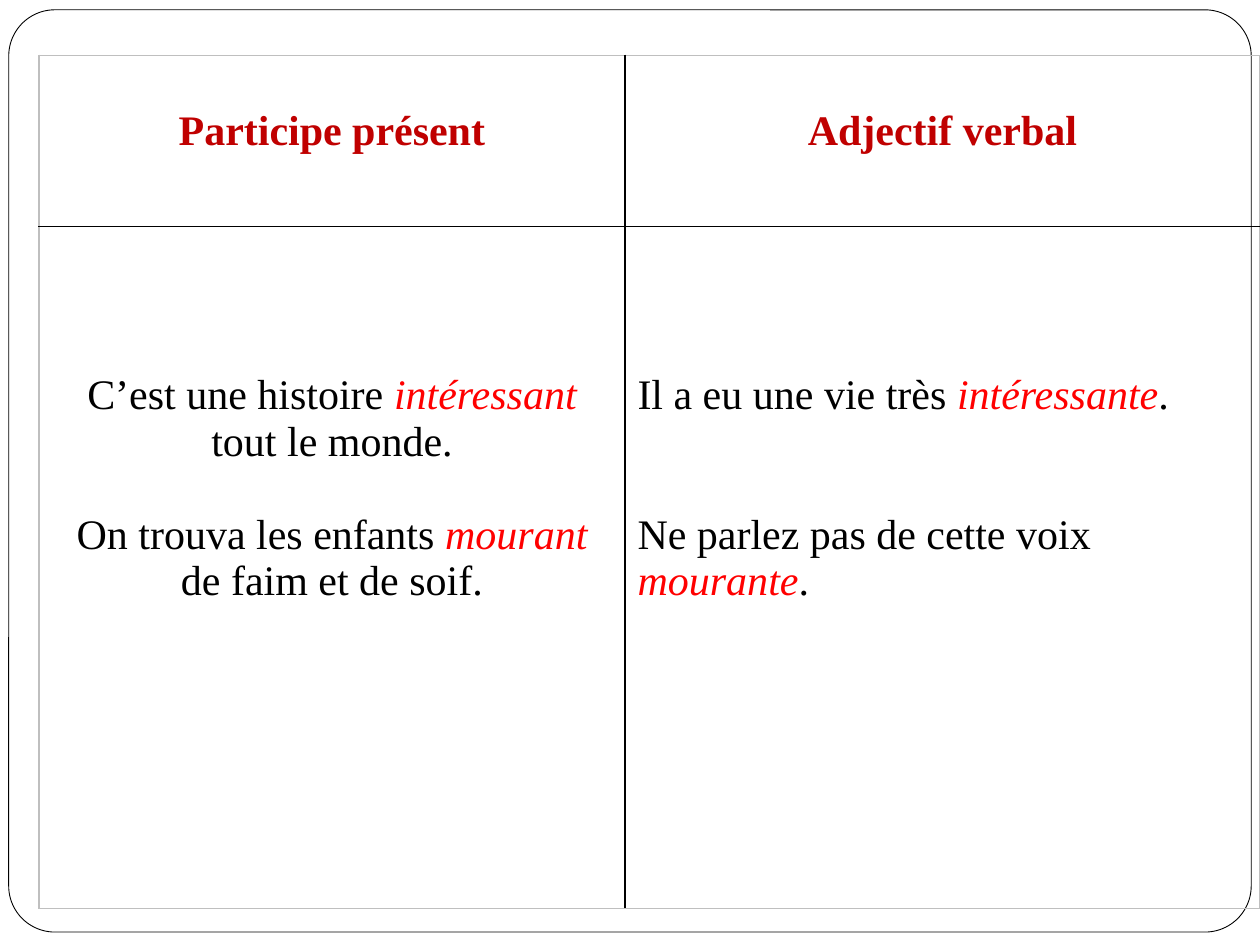
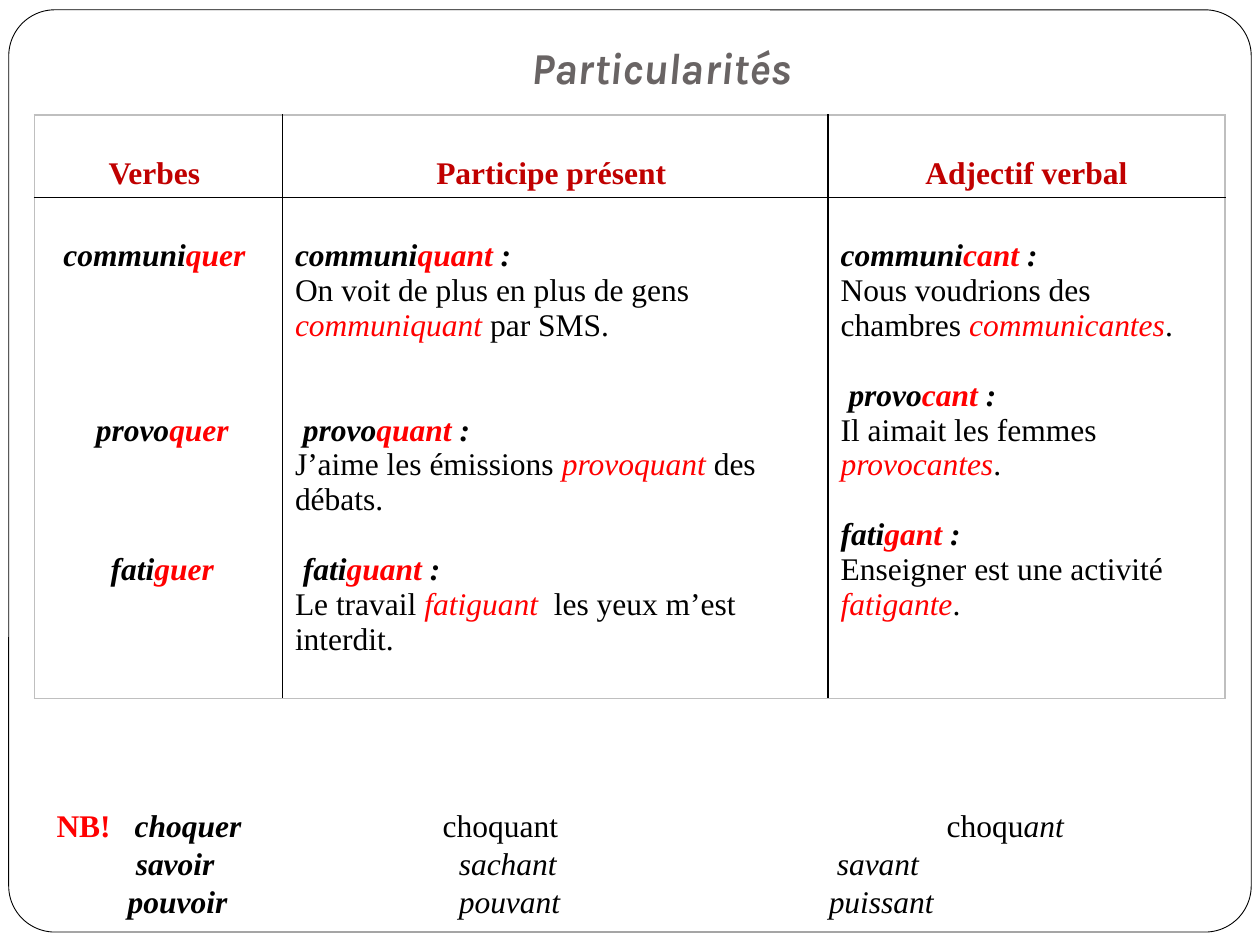
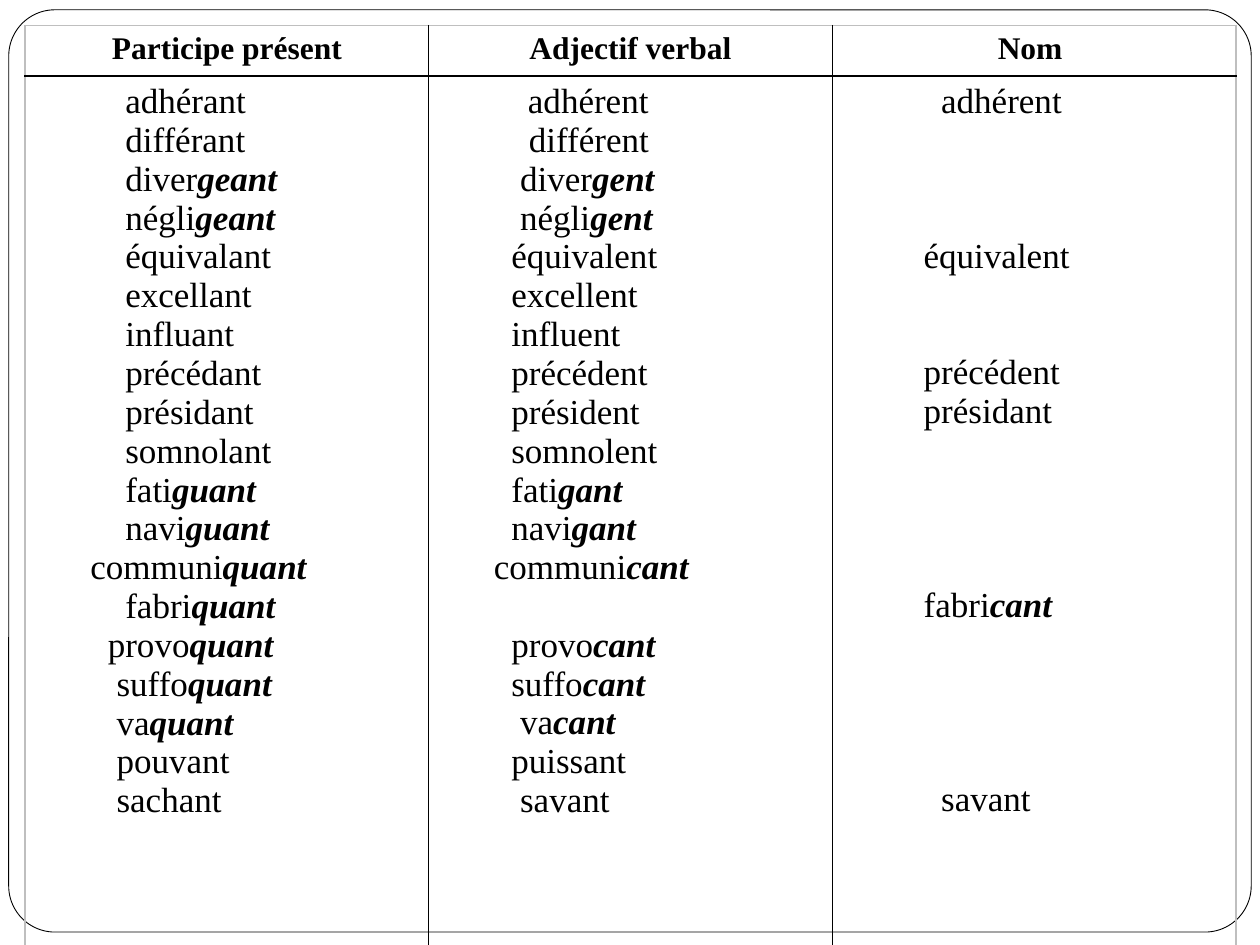
from pptx import Presentation
from pptx.dml.color import RGBColor
from pptx.enum.shapes import MSO_SHAPE
from pptx.enum.text import MSO_ANCHOR, PP_ALIGN
from pptx.oxml.ns import qn
from pptx.util import Pt
from lxml.etree import SubElement

# Shared look
BLACK, RED, DARK_RED, GREY, TITLE_GREY, WHITE = (
    "000000", "FF0000", "C00000", "BFBFBF", "696464", "FFFFFF")
SERIF, TITLE_FONT = "Times New Roman", "Karla"
LINE = 1.107            # line height of the serif font, in ems
CELL_TOP = 3.6
TITLE_ONLY, BLANK = 5, 6
# Text in [brackets] starts with one of these marks: bold, italic, colour
STYLES = {
    "*": (False, True, RED),
    "_": (True, True, BLACK),
    "^": (True, True, RED),
    "~": (False, True, BLACK),
    "#": (True, False, RED),
}

# Content: a paragraph is (text, empty lines before, indent)
COMPARISON = {
    "at": (22.3, 31.7), "columns": (334.8, 362.9), "rows": (97.9, 389.5),
    "header_size": 24, "header_color": DARK_RED, "header_gap": 1,
    "size": 24, "centred": (0,),
    "header": ("Participe présent", "Adjectif verbal"),
    "body": (
        [("C’est une histoire [*intéressant ]tout le monde.", 3, 0),
         ("On trouva les enfants [*mourant ]de faim et de soif.", 1, 0)],
        [("Il a eu une vie très [*intéressante].", 3, 0),
         ("Ne parlez pas de cette voix [*mourante].", 2, 0)],
    ),
}

PARTICULARITIES = {
    "at": (19.6, 65.7), "columns": (141.8, 311.8, 226.8), "rows": (46.9, 286.3),
    "header_size": 18, "header_color": DARK_RED, "header_gap": 1,
    "size": 18, "centred": (0,),
    "header": ("Verbes ", "Participe présent ", "Adjectif verbal"),
    "body": (
        [("[_communi][^quer ]", 1, 0),
         ("[_provo][^quer]", 4, 4.5),
         ("[_fati][^guer]", 3, 4.5)],
        [("[_communi][^quant ][_:]", 1, 0),
         ("On voit de plus en plus de gens [*communiquant] par SMS.", 0, 0),
         ("[_provo][^quant ][_:]", 2, 4.5),
         ("J’aime les émissions [*provoquant ]des débats.", 0, 0),
         ("[_fati][^guant ][_:]", 1, 4.5),
         ("Le travail [*fatiguant ] les yeux m’est interdit.", 0, 0)],
        [("[_communi][^cant ][_:]", 1, 0),
         ("Nous voudrions des chambres [*communicantes].", 0, 0),
         ("[_provo][^cant ][_:]", 1, 4.5),
         ("Il aimait les femmes [*provocantes].", 0, 0),
         ("[_fati][^gant ][_:]", 1, 0),
         ("Enseigner est une activité [*fatigante].", 0, 0)],
    ),
}

# Lines under the second table, each with its tab stops
EXCEPTIONS = [
    ("[#NB!]\t[_choquer]\tchoquant\tchoqu[~ant]", (44.7, 220.7, 508.7)),
    ("\t[_savoir]\t[~sachant]\t[~savant]", (45.3, 229.9, 445.9)),
    ("\t[_pouvoir]\t[~pouvant]\t[~puissant]", (40.7, 229.9, 441.3)),
]

# Word families: a word, or (word, own indent), or None
WORD_INDENTS = (50, 40, 45)
WORDS = [
    ("adhérant", ("adhérent", 49.5), ("adhérent", 55)),
    ("différant", ("différent", 50), None),
    ("diver[_geant]", ("diver[_gent]", 45), None),
    ("négli[_geant]", ("négli[_gent]", 45), None),
    ("équivalant", "équivalent", "équivalent"),
    ("excellant", "excellent", None),
    ("influant", "influent", None),
    ("précédant", "précédent", "précédent"),
    ("présidant", "président", "présidant"),
    ("somnolant", "somnolent", None),
    ("fati[_guant]", "fati[_gant]", None),
    ("navi[_guant]", "navi[_gant]", None),
    (("communi[_quant]", 30), ("communi[_cant]", 30), None),
    ("fabri[_quant]", None, "fabri[_cant]"),
    (("provo[_quant]", 40), "provo[_cant]", None),
    (("suffo[_quant]", 45), "suffo[_cant]", None),
    (("va[_quant]", 45), ("va[_cant]", 45), None),
    (("pouvant", 45), "puissant", None),
    (("sachant", 45), ("savant", 45), ("savant", 55)),
]


def word_column(words, indent):
    """Turn a column of words into paragraphs; gaps stand for missing words."""
    paragraphs, gap = [], 0
    for word in words:
        if word is None:
            gap += 1
            continue
        text, own_indent = word if isinstance(word, tuple) else (word, indent)
        paragraphs.append((text, gap, own_indent))
        gap = 0
    return paragraphs


WORD_FAMILIES = {
    "at": (14.4, 14.6), "columns": (230.6,) * 3, "rows": (27.4, 497.8),
    "header_size": 18, "header_color": BLACK, "header_gap": 0,
    "size": 20, "centred": (),
    "header": ("Participe présent", "Adjectif verbal", "Nom "),
    "body": [word_column(*pair) for pair in zip(zip(*WORDS), WORD_INDENTS)],
}


def rgb(color):
    return RGBColor.from_string(color)


def set_font(font, size, color, bold=False, name=SERIF):
    font.name, font.size, font.bold = name, Pt(size), bold
    font.color.rgb = rgb(color)


def add_runs(paragraph, text):
    for chunk in text.replace("]", "[").split("["):
        if not chunk:
            continue
        run = paragraph.add_run()
        style = STYLES.get(chunk[0])
        run.text = chunk[1:] if style else chunk
        if style:
            run.font.bold, run.font.italic, color = style
            run.font.color.rgb = rgb(color)


def next_paragraph(frame, index):
    return frame.add_paragraph() if index else frame.paragraphs[0]


def fill_cell(cell, paragraphs, size, color, bold, centred):
    # Empty lines at the top become the margin, later ones paragraph spacing
    cell.margin_top = Pt(round(CELL_TOP + paragraphs[0][1] * size * LINE, 2))
    for i, (text, gap, indent) in enumerate(paragraphs):
        paragraph = next_paragraph(cell.text_frame, i)
        paragraph.alignment = PP_ALIGN.CENTER if centred else PP_ALIGN.LEFT
        if i and gap:
            paragraph.space_before = Pt(round(gap * size * LINE, 2))
        if indent:
            properties = paragraph._p.get_or_add_pPr()
            properties.set("marL", str(Pt(indent)))
            properties.set("indent", "0")
        set_font(paragraph.font, size, color, bold)
        add_runs(paragraph, text)


def set_borders(cell, edges):
    properties = cell._tc.get_or_add_tcPr()
    for side, outer in edges.items():
        line = SubElement(properties, qn(f"a:ln{side}"), w=str(Pt(1)))
        fill = SubElement(line, qn("a:solidFill"))
        SubElement(fill, qn("a:srgbClr"), val=GREY if outer else BLACK)


def add_comparison_table(slide, content):
    columns, rows = content["columns"], content["rows"]
    left, top = content["at"]
    table = slide.shapes.add_table(
        len(rows), len(columns), Pt(left), Pt(top),
        Pt(sum(columns)), Pt(sum(rows))).table
    table.first_row = table.horz_banding = False
    for row, height in zip(table.rows, rows):
        row.height = Pt(height)
    for c, width in enumerate(columns):
        table.columns[c].width = Pt(width)
        header = [(content["header"][c], content["header_gap"], 0)]
        fill_cell(table.cell(0, c), header, content["header_size"],
                  content["header_color"], True, True)
        fill_cell(table.cell(1, c), content["body"][c], content["size"],
                  BLACK, False, c in content["centred"])
        for r in range(len(rows)):
            cell = table.cell(r, c)
            set_borders(cell, {"L": c == 0, "R": c == len(columns) - 1,
                               "T": r == 0, "B": r == len(rows) - 1})
            cell.fill.background()


def add_slide(deck, layout):
    """Add a slide with the rounded frame behind everything else."""
    slide = deck.slides.add_slide(deck.slide_layouts[layout])
    border = slide.shapes.add_shape(MSO_SHAPE.ROUNDED_RECTANGLE,
                                    Pt(5), Pt(5.6), Pt(710), Pt(527))
    border.adjustments[0] = 0.05
    border.shadow.inherit = False
    border.fill.solid()
    border.fill.fore_color.rgb = rgb(WHITE)
    border.line.color.rgb = rgb(BLACK)
    border.line.width = Pt(0.5)
    slide.shapes._spTree.insert(2, border._element)
    return slide


def set_title(slide, text):
    title = slide.shapes.title
    title.left, title.top, title.width, title.height = map(Pt, (72, 21.6, 612, 38.9))
    frame = title.text_frame
    frame.vertical_anchor = MSO_ANCHOR.BOTTOM
    frame.margin_left = frame.margin_right = frame.margin_bottom = Pt(7.2)
    frame.margin_top = Pt(3.6)
    frame.text = text
    paragraph = frame.paragraphs[0]
    paragraph.alignment = PP_ALIGN.CENTER
    set_font(paragraph.font, 25.2, TITLE_GREY, True, TITLE_FONT)
    paragraph.font.italic = True


def add_exceptions(slide):
    frame = slide.shapes.add_textbox(Pt(25.2), Pt(457.2), Pt(611.3), Pt(72.7)).text_frame
    frame.word_wrap = True
    for i, (text, stops) in enumerate(EXCEPTIONS):
        paragraph = next_paragraph(frame, i)
        paragraph.line_spacing = Pt(21.7)
        tabs = SubElement(paragraph._p.get_or_add_pPr(), qn("a:tabLst"))
        for stop in stops:
            SubElement(tabs, qn("a:tab"), pos=str(Pt(stop)), algn="l")
        set_font(paragraph.font, 18, BLACK)
        add_runs(paragraph, text)


def main():
    deck = Presentation()
    deck.slide_width, deck.slide_height = Pt(720), Pt(540)

    # Participle and adjective
    add_comparison_table(add_slide(deck, BLANK), COMPARISON)

    # Spelling differences
    slide = add_slide(deck, TITLE_ONLY)
    set_title(slide, "Particularités")
    add_comparison_table(slide, PARTICULARITIES)
    add_exceptions(slide)

    # Word families
    add_comparison_table(add_slide(deck, BLANK), WORD_FAMILIES)

    deck.save("out.pptx")


if __name__ == "__main__":
    main()
